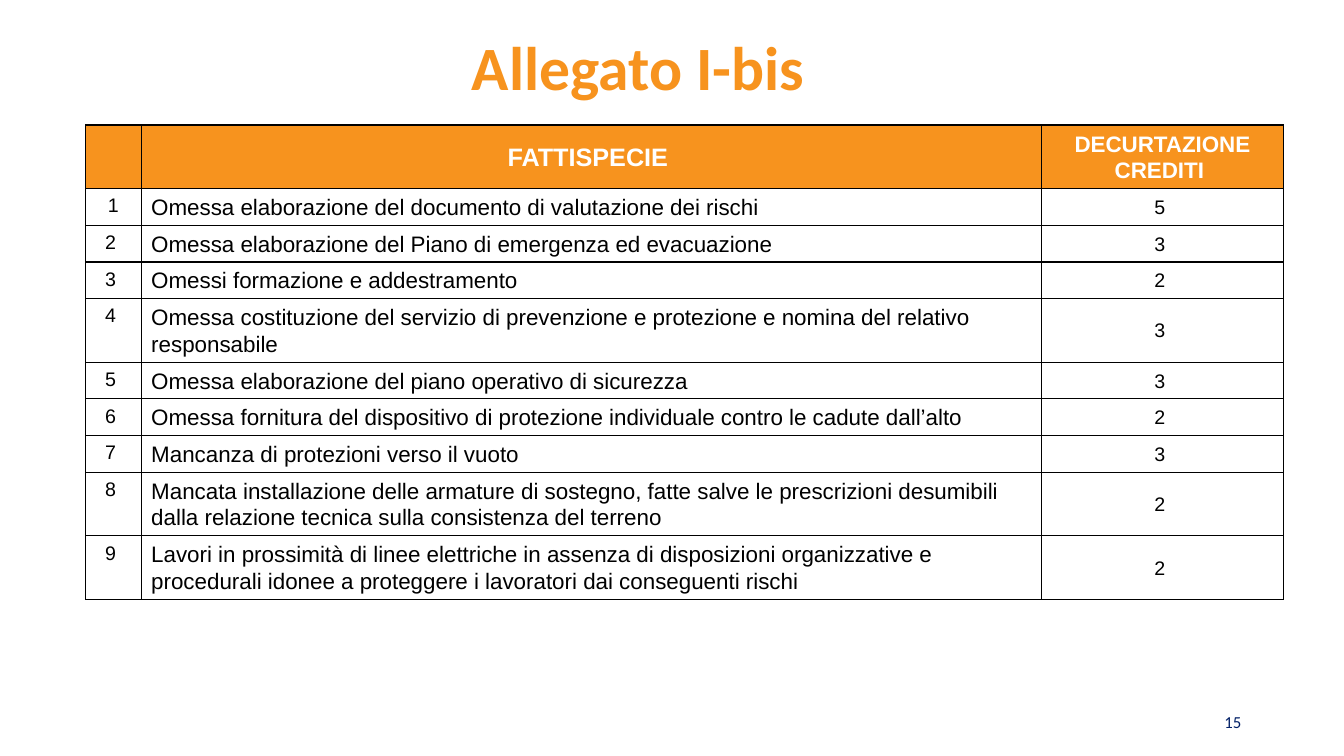
"""Build the Allegato I-bis slide with its table of credit deductions."""
from dataclasses import dataclass

from lxml.etree import SubElement
from pptx import Presentation
from pptx.dml.color import RGBColor
from pptx.enum.text import MSO_ANCHOR as Anchor, MSO_AUTO_SIZE as AutoSize, PP_ALIGN as Align
from pptx.oxml.ns import qn
from pptx.slide import Slide
from pptx.table import _Cell as Cell
from pptx.text.text import TextFrame
from pptx.util import Inches, Pt

ORANGE, WHITE, BLACK, NAVY = "F7931E", "FFFFFF", "000000", "011F66"
COLUMN_WIDTHS = (0.55, 8.93, 2.4)
HEADER_HEIGHT, LINE_HEIGHT, TWO_LINE_HEIGHT = 0.63, 0.36, 0.63


@dataclass(frozen=True)
class TextStyle:
    size: float
    color: str = BLACK
    bold: bool = False
    align: Align = Align.CENTER
    anchor: Anchor = Anchor.MIDDLE
    font: str = "Arial"
    line_spacing: float = 1.07


@dataclass(frozen=True)
class Violation:
    description: str
    credits: int
    height: float = LINE_HEIGHT


TITLE = TextStyle(44, ORANGE, True, font="Calibri", line_spacing=1)
PAGE_NUMBER = TextStyle(12, NAVY, align=Align.RIGHT, anchor=Anchor.BOTTOM,
                        font="Calibri", line_spacing=1)
HEADER = TextStyle(18, WHITE, True)
CREDITS_HEADER = TextStyle(16, WHITE, True)
NUMBER = TextStyle(14, anchor=Anchor.TOP)
DESCRIPTION = TextStyle(16, align=Align.LEFT, anchor=Anchor.TOP)
CREDITS = TextStyle(14)

VIOLATIONS = (
    Violation("Omessa elaborazione del documento di valutazione dei rischi", 5),
    Violation("Omessa elaborazione del Piano di emergenza ed evacuazione", 3),
    Violation("Omessi formazione e addestramento", 2),
    Violation("Omessa costituzione del servizio di prevenzione e protezione e nomina "
              "del relativo responsabile", 3, TWO_LINE_HEIGHT),
    Violation("Omessa elaborazione del piano operativo di sicurezza", 3),
    Violation("Omessa fornitura del dispositivo di protezione individuale contro "
              "le cadute dall’alto", 2),
    Violation("Mancanza di protezioni verso il vuoto", 3),
    Violation("Mancata installazione delle armature di sostegno, fatte salve le prescrizioni "
              "desumibili dalla relazione tecnica sulla consistenza del terreno",
              2, TWO_LINE_HEIGHT),
    Violation("Lavori in prossimità di linee elettriche in assenza di disposizioni "
              "organizzative e procedurali idonee a proteggere i lavoratori dai "
              "conseguenti rischi", 2, TWO_LINE_HEIGHT),
)


def rgb(color: str) -> RGBColor:
    return RGBColor.from_string(color)


def write(frame: TextFrame, text: str, style: TextStyle) -> None:
    paragraph = frame.paragraphs[0]
    paragraph.alignment = style.align
    paragraph.line_spacing = style.line_spacing
    paragraph.font.size = Pt(style.size)
    if text:
        run = paragraph.add_run()
        run.text = text
        run.font.name = style.font
        run.font.size = Pt(style.size)
        run.font.bold = style.bold
        run.font.color.rgb = rgb(style.color)


def write_box(frame: TextFrame, text: str, style: TextStyle) -> None:
    frame.word_wrap = True
    frame.auto_size = AutoSize.NONE
    frame.vertical_anchor = style.anchor
    write(frame, text, style)


def add_borders(cell: Cell) -> None:
    properties = cell._tc.get_or_add_tcPr()
    for position, side in enumerate(("lnL", "lnR", "lnT", "lnB")):
        line = SubElement(properties, qn(f"a:{side}"), w=str(Pt(1)))
        fill = SubElement(line, qn("a:solidFill"))
        SubElement(fill, qn("a:srgbClr"), val=BLACK)
        properties.insert(position, line)


def fill_cell(cell: Cell, text: str, style: TextStyle, fill: str) -> None:
    cell.fill.solid()
    cell.fill.fore_color.rgb = rgb(fill)
    cell.vertical_anchor = style.anchor
    write(cell.text_frame, text, style)
    add_borders(cell)


def add_violations_table(slide: Slide) -> None:
    heights = [HEADER_HEIGHT] + [violation.height for violation in VIOLATIONS]
    table = slide.shapes.add_table(
        len(heights), len(COLUMN_WIDTHS), Inches(0.85), Inches(1.24),
        Inches(sum(COLUMN_WIDTHS)), Inches(sum(heights))).table
    table.first_row = table.horz_banding = False
    for column, width in zip(table.columns, COLUMN_WIDTHS):
        column.width = Inches(width)
    for row, height in zip(table.rows, heights):
        row.height = Inches(height)

    headers = (("", HEADER), ("FATTISPECIE ", HEADER),
               ("DECURTAZIONE CREDITI ", CREDITS_HEADER))
    for cell, (text, style) in zip(table.rows[0].cells, headers):
        fill_cell(cell, text, style, ORANGE)
    for number, violation in enumerate(VIOLATIONS, start=1):
        number_text = str(number) if number == 1 else f"{number} "
        values = ((number_text, NUMBER), (violation.description, DESCRIPTION),
                  (f"{violation.credits} ", CREDITS))
        for cell, (text, style) in zip(table.rows[number].cells, values):
            fill_cell(cell, text, style, WHITE)


def main() -> None:
    presentation = Presentation()
    presentation.slide_width = Inches(13.33)
    presentation.slide_height = Inches(7.5)
    slide = presentation.slides.add_slide(presentation.slide_layouts[5])

    title = slide.shapes.title
    title.left, title.top = Inches(0.48), Inches(0.29)
    title.width, title.height = Inches(11.7), Inches(0.73)
    write_box(title.text_frame, "Allegato I-bis", TITLE)

    add_violations_table(slide)

    page_number = slide.shapes.add_textbox(
        Inches(11.22), Inches(6.91), Inches(1.19), Inches(0.4))
    write_box(page_number.text_frame, "15", PAGE_NUMBER)
    presentation.save("out.pptx")


if __name__ == "__main__":
    main()
